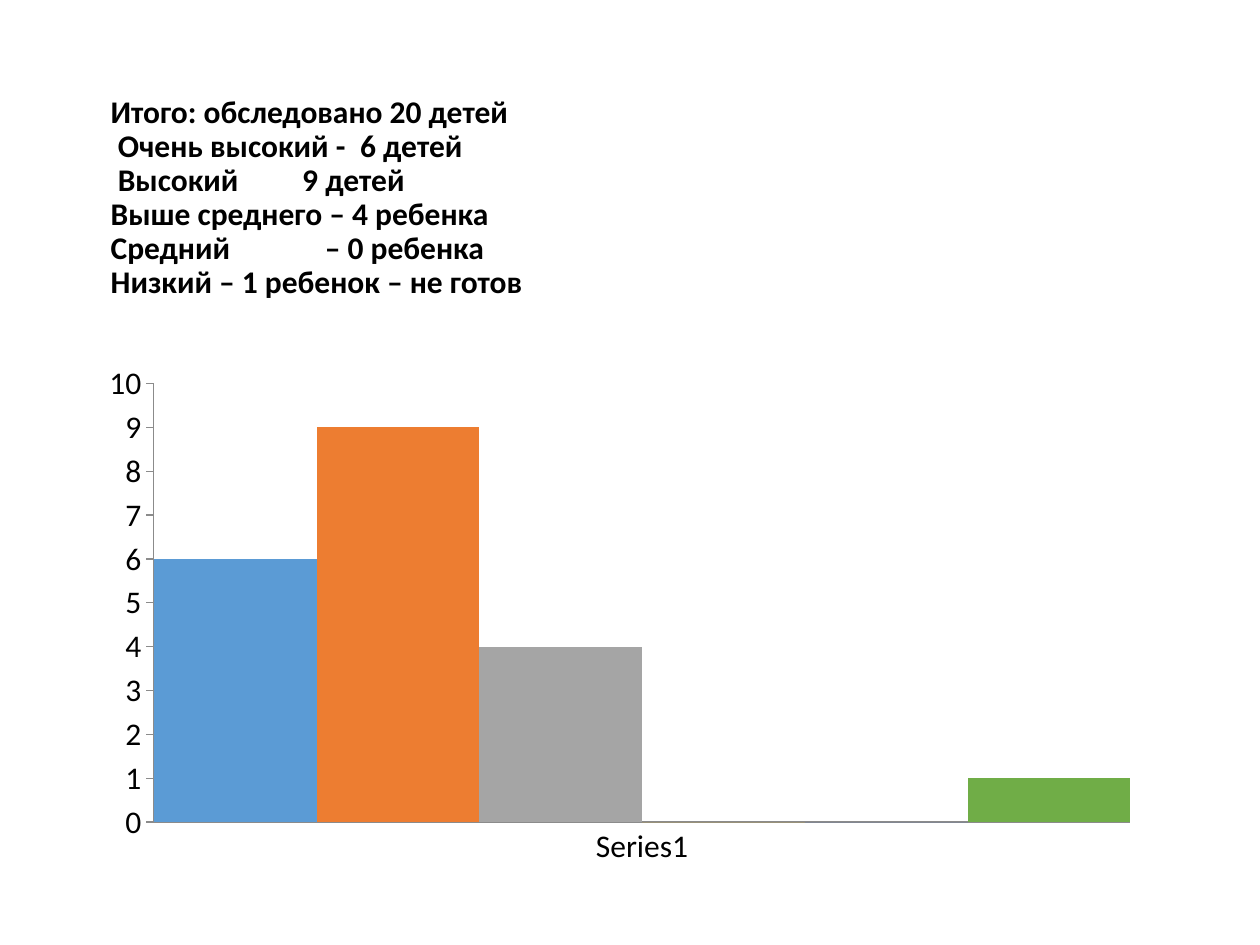
from lxml import etree
from pptx import Presentation
from pptx.chart.data import CategoryChartData
from pptx.dml.color import RGBColor
from pptx.enum.chart import XL_CHART_TYPE, XL_TICK_MARK
from pptx.enum.text import MSO_ANCHOR
from pptx.oxml.ns import qn
from pptx.util import Inches, Pt

COLUMN = XL_CHART_TYPE.COLUMN_CLUSTERED
NONE, OUT = XL_TICK_MARK.NONE, XL_TICK_MARK.OUTSIDE
MIDDLE = MSO_ANCHOR.MIDDLE


def rgb(code):
    return RGBColor.from_string(code)


def add_line(para, text, size=18, color="000000", bold=True, tab=None):
    para.line_spacing = 0.9
    para.add_run().text = text
    if tab:
        stops = etree.SubElement(para._p.get_or_add_pPr(), qn("a:tabLst"))
        etree.SubElement(stops, qn("a:tab"), pos=str(Inches(tab)), algn="l")
    font = para.runs[0].font
    font.name, font.size, font.bold = "Calibri", Pt(size), bold
    font.color.rgb = rgb(color)


deck = Presentation()
deck.slide_width, deck.slide_height = Inches(10), Inches(7.5)
slide = deck.slides.add_slide(deck.slide_layouts[6])

# Summary of results, with tab stops for the wide gaps
lines = [
    ("Итого: обследовано 20 детей", None),
    (" Очень высокий -\t6 детей", 1.98),
    (" Высокий\t9 детей", 1.52),
    ("Выше среднего – 4 ребенка", None),
    ("Средний\t– 0 ребенка", 1.7),
    ("Низкий – 1 ребенок – не готов", None),
]
box = slide.shapes.add_textbox(Inches(0.78), Inches(0.71), Inches(8.62), Inches(1.73))
frame = box.text_frame
frame.word_wrap = True
frame.vertical_anchor = MIDDLE
for i, (text, tab) in enumerate(lines):
    para = frame.add_paragraph() if i else frame.paragraphs[0]
    add_line(para, text, tab=tab)

# Column chart: one series per level
values = [6, 9, 4, 0, 0, 1]
colors = ["5B9BD5", "ED7D31", "A5A5A5", "FFC000", "4472C4", "70AD47"]
data = CategoryChartData()
data.categories = ["Series1"]
for i, value in enumerate(values, 1):
    data.add_series(f"Series {i}", [value])
chart = slide.shapes.add_chart(
    COLUMN, Inches(0.7), Inches(2.81), Inches(8.44), Inches(4.14), data
).chart
chart.has_legend = False
chart.has_title = False
chart.font.name, chart.font.size = "Calibri", Pt(18)
chart.font.color.rgb = rgb("000000")

plot = chart.plots[0]
plot.gap_width = 0
plot.overlap = 0
plot.vary_by_categories = False
for series, color in zip(plot.series, colors):
    series.format.fill.solid()
    series.format.fill.fore_color.rgb = rgb(color)

# Axes
for axis, tick in ((chart.category_axis, NONE), (chart.value_axis, OUT)):
    axis.has_major_gridlines = False
    axis.major_tick_mark = tick
    axis.minor_tick_mark = NONE
    axis.format.line.color.rgb = rgb("8B8B8B")
    axis.format.line.width = Pt(0.75)
scale = chart.value_axis
scale.minimum_scale, scale.maximum_scale, scale.major_unit = 0, 10, 1

deck.save("out.pptx")
